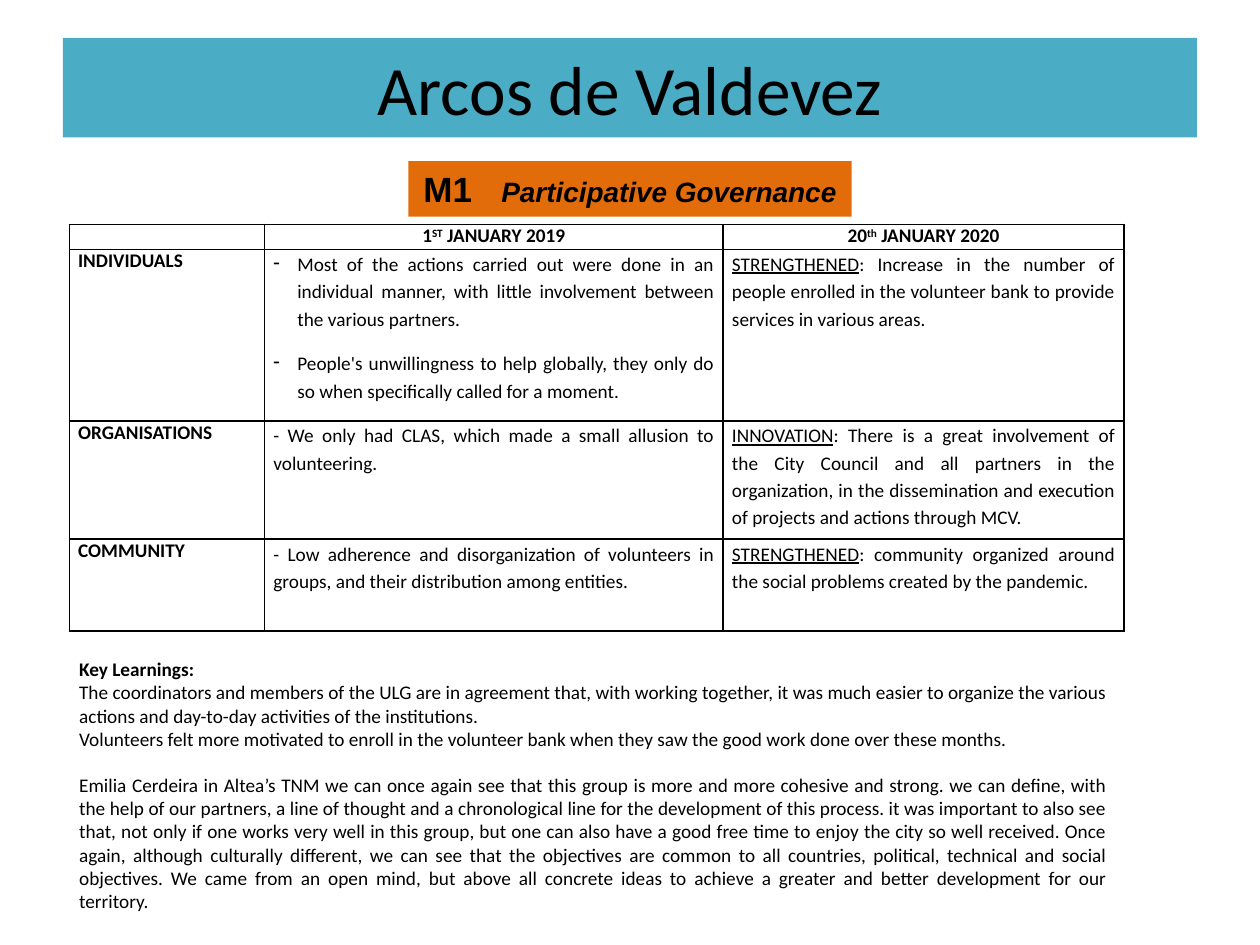
from lxml.etree import SubElement
from pptx import Presentation
from pptx.dml.color import RGBColor
from pptx.enum.shapes import MSO_SHAPE
from pptx.enum.text import MSO_ANCHOR, MSO_AUTO_SIZE, PP_ALIGN
from pptx.oxml.ns import qn
from pptx.util import Inches, Pt

COLORS = {"teal": "4BACC6", "orange": "E36C0A", "black": "000000"}
BOLD = {"b": "1"}
UNDERLINE = {"u": "sng"}
SUPERSCRIPT = {"b": "1", "baseline": "30000"}
WIDE_GAP = {"b": "1", "spc": "1110"}
BODY = {"line_spacing": 1.15}
SPACED = {"line_spacing": 1.15, "space_after": 10}
CENTERED = {"align": PP_ALIGN.CENTER}


class SlideBuilder:
    """Holds the style and the current slide, and adds each kind of element."""

    def __init__(self, slide, font="Calibri", size=11):
        self.slide = slide
        self.font = font
        self.size = size

    def color(self, name):
        return RGBColor.from_string(COLORS[name])

    def paragraph(self, paragraph, runs, align=PP_ALIGN.JUSTIFY, line_spacing=None,
                  space_before=None, space_after=None, bullet=None):
        paragraph.alignment = align
        if line_spacing:
            paragraph.line_spacing = line_spacing
        if space_before:
            paragraph.space_before = Pt(space_before)
        if space_after:
            paragraph.space_after = Pt(space_after)
        if bullet:
            properties = paragraph._p.get_or_add_pPr()
            properties.set("marL", str(Inches(0.19)))
            properties.set("indent", str(-Inches(0.19)))
            SubElement(properties, qn("a:buChar")).set("char", bullet)
        for text, attributes, *style in runs:
            font_name, size = style or (self.font, self.size)
            run = paragraph.add_run()
            run.text = text
            run.font.name = font_name
            run.font.size = Pt(size)
            run.font.color.rgb = self.color("black")
            for key, value in attributes.items():
                run._r.get_or_add_rPr().set(key, value)
        if not runs:
            SubElement(paragraph._p, qn("a:endParaRPr")).set("sz", str(self.size * 100))

    def paragraphs(self, frame, contents):
        for index, (runs, options) in enumerate(contents):
            paragraph = frame.add_paragraph() if index else frame.paragraphs[0]
            self.paragraph(paragraph, runs, **options)

    def banner(self, box, fill, runs, wrap=True):
        shape = self.slide.shapes.add_shape(MSO_SHAPE.RECTANGLE, *map(Inches, box))
        shape.shadow.inherit = False
        shape.fill.solid()
        shape.fill.fore_color.rgb = self.color(fill)
        shape.line.fill.background()
        frame = shape.text_frame
        frame.word_wrap = wrap
        frame.vertical_anchor = MSO_ANCHOR.MIDDLE
        self.paragraphs(frame, [(runs, CENTERED)])

    def text_box(self, box, contents):
        frame = self.slide.shapes.add_textbox(*map(Inches, box)).text_frame
        frame.word_wrap = True
        frame.auto_size = MSO_AUTO_SIZE.SHAPE_TO_FIT_TEXT
        self.paragraphs(frame, contents)

    def borders(self, cell):
        properties = cell._tc.get_or_add_tcPr()
        for index, side in enumerate(("lnL", "lnR", "lnT", "lnB")):
            line = properties.makeelement(qn(f"a:{side}"), {"w": str(Pt(1))})
            fill = SubElement(line, qn("a:solidFill"))
            SubElement(fill, qn("a:srgbClr")).set("val", COLORS["black"])
            properties.insert(index, line)

    def table(self, left, top, widths, heights, rows):
        frame = self.slide.shapes.add_table(
            len(heights), len(widths), Inches(left), Inches(top),
            Inches(sum(widths)), Inches(sum(heights)))
        table = frame.table
        table.first_row = table.horz_banding = False
        for column, width in zip(table.columns, widths):
            column.width = Inches(width)
        for row, height, contents in zip(table.rows, heights, rows):
            row.height = Inches(height)
            for cell, content in zip(row.cells, contents):
                cell.margin_left = cell.margin_right = Inches(0.07)
                cell.margin_top = cell.margin_bottom = 0
                cell.fill.background()
                self.borders(cell)
                self.paragraphs(cell.text_frame, content)


def date_cell(day, suffix, rest):
    return [([(day, BOLD), (suffix, SUPERSCRIPT), (rest, BOLD)], CENTERED)]


def label_cell(text):
    return [([(text, BOLD)], {})]


def change_cell(kind, text, options=BODY):
    return [([(kind, UNDERLINE), (text, {})], options)]


def plain(text, **options):
    return [(text, {})], options


def main():
    presentation = Presentation()
    presentation.slide_width = Inches(10)
    presentation.slide_height = Inches(7.5)
    builder = SlideBuilder(presentation.slides.add_slide(presentation.slide_layouts[6]))

    builder.banner((0.5, 0.3, 9, 0.79), "teal",
                   [("Arcos de Valdevez", {}, "Calibri", 39.6)])
    rows = [
        [[([], {})],
         date_cell("1", "ST", " JANUARY 2019"),
         date_cell("20", "th", " JANUARY 2020")],
        [label_cell("INDIVIDUALS"),
         [plain("Most of the actions carried out were done in an individual manner, "
                "with little involvement between the various partners.", bullet="-", **SPACED),
          plain("People's unwillingness to help globally, they only do so when "
                "specifically called for a moment.", bullet="-", **SPACED)],
         change_cell("STRENGTHENED", ": Increase in the number of people enrolled in the "
                     "volunteer bank to provide services in various areas.")],
        [label_cell("ORGANISATIONS"),
         [plain("- We only had CLAS, which made a small allusion to volunteering.", **BODY)],
         change_cell("INNOVATION", ": There is a great involvement of the City Council and all "
                     "partners in the organization, in the dissemination and execution of "
                     "projects and actions through MCV.")],
        [label_cell("COMMUNITY"),
         [plain("- Low adherence and disorganization of volunteers in groups, and their "
                "distribution among entities.", **SPACED)],
         change_cell("STRENGTHENED", ": community organized around the social problems "
                     "created by the pandemic.", SPACED)],
    ]
    builder.table(0.55, 1.78, (1.55, 3.64, 3.18), (0.2, 1.36, 0.94, 0.73), rows)
    builder.banner((3.24, 1.28, 3.52, 0.44), "orange",
                   [("M1", BOLD, "Arial", 20), (" ", WIDE_GAP, "Arial", 20),
                    ("Participative Governance", {"b": "1", "i": "1"}, "Arial", 16)],
                   wrap=False)
    builder.text_box((0.53, 5.17, 8.36, 2.44), [
        ([("Key Learnings:", BOLD)], {"align": PP_ALIGN.LEFT}),
        plain("The coordinators and members of the ULG are in agreement that, with working "
              "together, it was much easier to organize the various actions and day-to-day "
              "activities of the institutions."),
        plain("Volunteers felt more motivated to enroll in the volunteer bank when they saw "
              "the good work done over these months."),
        plain("Emilia Cerdeira in Altea’s TNM we can once again see that this group is more "
              "and more cohesive and strong. we can define, with the help of our partners, a "
              "line of thought and a chronological line for the development of this process. "
              "it was important to also see that, not only if one works very well in this "
              "group, but one can also have a good free time to enjoy the city so well "
              "received. Once again, although culturally different, we can see that the "
              "objectives are common to all countries, political, technical and social "
              "objectives. We came from an open mind, but above all concrete ideas to achieve "
              "a greater and better development for our territory.", space_before=13.4),
    ])
    presentation.save("out.pptx")


if __name__ == "__main__":
    main()
